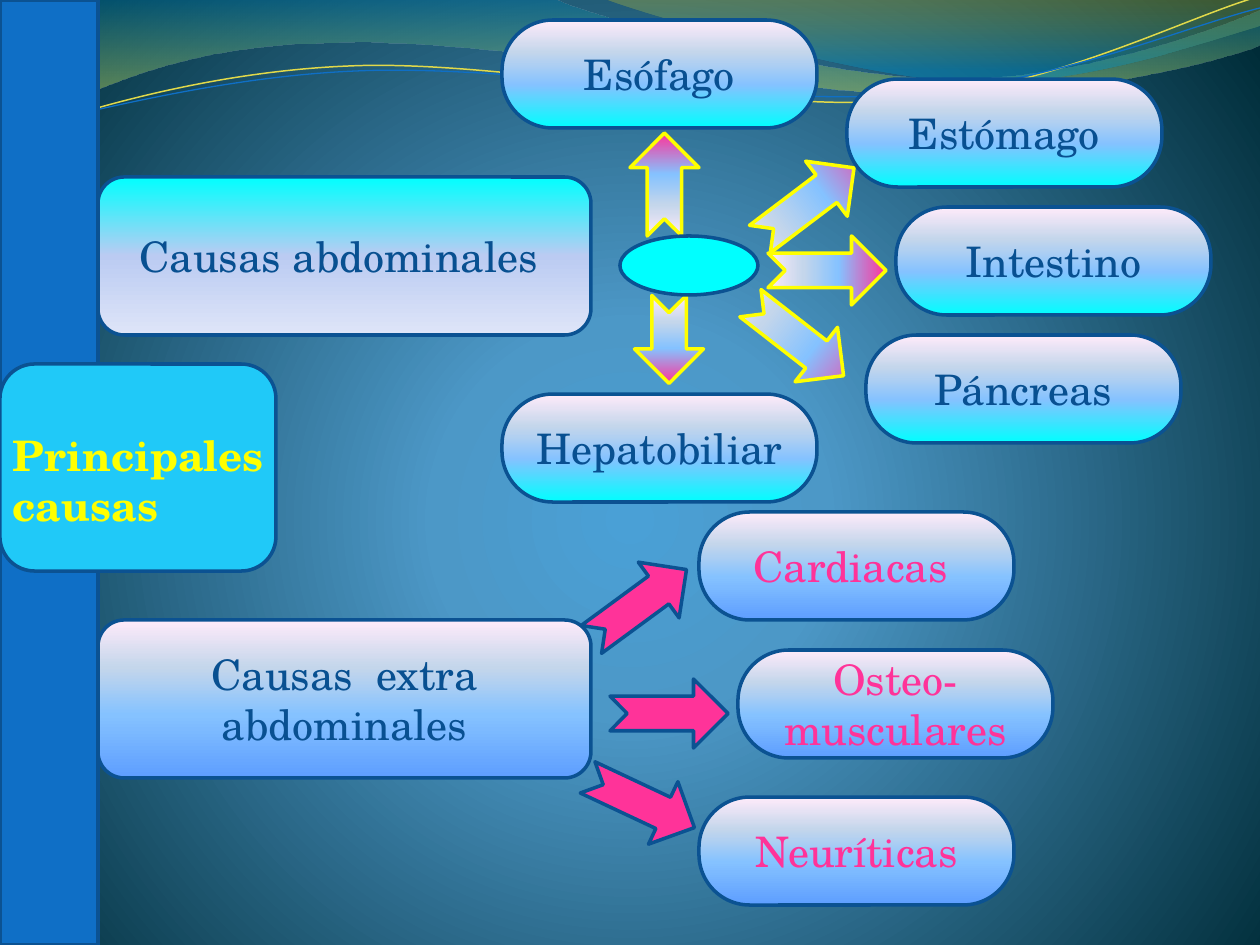
from math import cos, radians, sin

from lxml.etree import SubElement
from pptx import Presentation
from pptx.dml.color import RGBColor
from pptx.enum.shapes import MSO_SHAPE
from pptx.enum.text import MSO_ANCHOR, MSO_AUTO_SIZE, PP_ALIGN
from pptx.oxml.ns import qn
from pptx.util import Pt

PX = 914400 / 126
FONT = "TeX Gyre Schola"

NAVY = RGBColor(0x08, 0x50, 0x91)
OUTLINE = RGBColor(0x0B, 0x52, 0x92)
BLUE = RGBColor(0x0F, 0x6F, 0xC6)
SKY = RGBColor(0x20, 0xC9, 0xF8)
CYAN = RGBColor(0x00, 0xFF, 0xFF)
PINK = RGBColor(0xFF, 0x33, 0x99)
YELLOW = RGBColor(0xFF, 0xFF, 0x00)
GOLD = RGBColor(0xE1, 0xD9, 0x4A)
PERIWINKLE = RGBColor(0x5E, 0x9E, 0xFF)

# Gradients: (position %, colour, opacity %)
BACKDROP = [(0, RGBColor(0x4A, 0xA0, 0xD6), 100), (25, RGBColor(0x4C, 0x98, 0xC7), 100),
            (100, RGBColor(0x00, 0x2C, 0x38), 100)]
LAVENDER = [(0, CYAN, 100), (50, RGBColor(0xBB, 0xCB, 0xF2), 100),
            (100, RGBColor(0xDE, 0xE5, 0xF8), 100)]
PASTEL_TAIL = [(40, RGBColor(0x85, 0xC2, 0xFF), 100), (70, RGBColor(0xC4, 0xD6, 0xEB), 100),
               (100, RGBColor(0xFF, 0xEB, 0xFA), 100)]
CYAN_PASTEL, BLUE_PASTEL, PINK_PASTEL = (
    [(0, first, 100)] + PASTEL_TAIL for first in (CYAN, PERIWINKLE, PINK))

# Outlines: (left, top, width, height), then steps as they lie on the slide;
# a pair is a straight step, six numbers are a Bézier curve
WAVES = [
    ((-1, -1, 1262, 143),
     [(0, 0), (554, -1), (600, 21, 837, 79, 955, 79), (1074, 79, 1207, 33, 1260, 11),
      (1261, 45), (1239, 55, 1096, 96, 940, 95), (783, 95, 481, 35, 324, 43),
      (163, 45, 58, 105, -1, 142), (0, 0)],
     [(0, RGBColor(0x00, 0x74, 0xA1), 45), (100, RGBColor(0xFF, 0xF4, 0x35), 55)]),
    ((604, -1, 656, 88),
     [(604, -1), (641, 14, 859, 78, 969, 82), (1079, 87, 1211, 40, 1260, 26), (1260, 0),
      (604, -1)],
     [(0, RGBColor(0xD0, 0xC7, 0x2B), 30), (80, RGBColor(0x00, 0x8B, 0xBF), 45)]),
]
RIBBONS = [
    ((-3, 28, 1262, 89),
     [(0, 140), (60, 117, 199, 72, 349, 66), (498, 59, 747, 112, 898, 101),
      (1050, 89, 1182, 19, 1257, -3)], GOLD, 0.85),
    ((-3, 38, 1264, 73),
     [(0, 131), (59, 121, 207, 77, 357, 71), (508, 64, 752, 106, 903, 95),
      (1053, 84, 1187, 26, 1260, 8)], BLUE, 0.75),
]
RIBBON_TILT = -2.7

# Groups of causes: (text, top, gradient, angle)
GROUPS = [("Causas abdominales ", 177, LAVENDER, 90),
          ("Causas  extra abdominales", 620, BLUE_PASTEL, 270)]
GROUP_LEFT, GROUP_SIZE = 98, (493, 158)

# Single causes: (text, left, top)
EXTRA_ABDOMINAL = [("Cardiacas ", 699, 512), ("Neuríticas", 699, 797),
                   ("Osteo-\nmusculares", 738, 650)]
ABDOMINAL = [("Esófago", 502, 20), ("Estómago", 847, 79), ("Intestino", 896, 207),
             ("Hepatobiliar", 502, 394), ("Páncreas", 866, 335)]
CAUSE_SIZE = (315, 108)

# Arrows: (left, top, length, rotation)
EXTRA_ARROWS = [(610, 679, 118, 0), (582, 768, 118, 25.2), (580, 570, 118, 323.7)]
ABDOMINAL_ARROWS = [(768, 236, 118, 0), (625, 305, 88, 90), (748, 169, 118, 322.9),
                    (738, 305, 118, 37.9), (613, 150, 103, 270)]
ARROW_HEIGHT = 69

TITLE = "Principales\ncausas"


def emu(px):
    return round(px * PX)


def paint_gradient(fill, owner, stops, angle=None):
    """Fill linearly at the angle, or circularly when there is none."""
    fill.gradient()
    gradient = next(owner.iter(qn("a:gradFill")))
    for child in list(gradient):
        gradient.remove(child)
    stop_list = SubElement(gradient, qn("a:gsLst"))
    for position, color, opacity in stops:
        stop = SubElement(stop_list, qn("a:gs"), pos=str(position * 1000))
        rgb = SubElement(stop, qn("a:srgbClr"), val=str(color))
        if opacity < 100:
            SubElement(rgb, qn("a:alpha"), val=str(opacity * 1000))
    if angle is None:
        circle = SubElement(gradient, qn("a:path"), {"path": "circle"})
        SubElement(circle, qn("a:fillToRect"), l="10000", t="110000", r="10000", b="100000")
    else:
        SubElement(gradient, qn("a:lin"), ang=str(angle * 60000), scaled="0")


def paint(shape, fill, angle=90, line=OUTLINE, width=2):
    shape.shadow.inherit = False
    if fill is None:
        shape.fill.background()
    elif isinstance(fill, RGBColor):
        shape.fill.solid()
        shape.fill.fore_color.rgb = fill
    else:
        paint_gradient(shape.fill, shape._element, fill, angle)
    if line is None:
        shape.line.fill.background()
    else:
        shape.line.color.rgb = line
        shape.line.width = Pt(width)


def add_outline(shapes, box, steps, tilt=0):
    """Draw steps given in slide px as a shape whose box is turned by tilt degrees."""
    left, top, width, height = box
    builder = shapes.build_freeform(emu(left), emu(top))
    builder.add_line_segments([(emu(left + width), emu(top + height))], close=False)
    outline = builder.convert_to_shape()
    outline.rotation = tilt
    contour = next(outline._element.iter(qn("a:path")))
    for child in list(contour):
        contour.remove(child)
    cosine, sine = cos(radians(-tilt)), sin(radians(-tilt))
    for index, step in enumerate(steps):
        command = "cubicBezTo" if len(step) == 6 else "lnTo" if index else "moveTo"
        segment = SubElement(contour, qn("a:" + command))
        for x, y in zip(step[::2], step[1::2]):
            dx, dy = x - left - width / 2, y - top - height / 2
            SubElement(segment, qn("a:pt"),
                       x=str(emu(dx * cosine - dy * sine + width / 2)),
                       y=str(emu(dx * sine + dy * cosine + height / 2)))
    if steps[0] == steps[-1]:
        SubElement(contour, qn("a:close"))
    return outline


def add_block(shapes, kind, left, top, width, height, fill, **style):
    block = shapes.add_shape(kind, emu(left), emu(top), emu(width), emu(height))
    paint(block, fill, **style)
    return block


def write(shape, text, color=NAVY, bold=False, align=PP_ALIGN.CENTER,
          anchor=MSO_ANCHOR.MIDDLE, wrap=True):
    frame = shape.text_frame
    frame.text = text
    frame.word_wrap = wrap
    frame.vertical_anchor = anchor
    for paragraph in frame.paragraphs:
        paragraph.alignment = align
        font = paragraph.runs[0].font
        font.name, font.size, font.bold = FONT, Pt(24), bold
        font.color.rgb = color


def main():
    deck = Presentation()
    deck.slide_width, deck.slide_height = emu(1260), emu(945)
    slide = deck.slides.add_slide(deck.slide_layouts[5])
    shapes = slide.shapes
    paint_gradient(slide.background.fill, slide._element, BACKDROP)

    for box, steps, stops in WAVES:
        paint(add_outline(shapes, box, steps), stops, line=None)
    for box, steps, color, width in RIBBONS:
        paint(add_outline(shapes, box, steps, RIBBON_TILT), None, line=color, width=width)

    for label, top, stops, angle in GROUPS:
        group = add_block(shapes, MSO_SHAPE.ROUNDED_RECTANGLE, GROUP_LEFT, top, *GROUP_SIZE,
                          stops, angle=angle)
        write(group, label)

    for causes, stops, color in ((EXTRA_ABDOMINAL, BLUE_PASTEL, PINK),
                                 (ABDOMINAL, CYAN_PASTEL, NAVY)):
        for label, left, top in causes:
            cause = add_block(shapes, MSO_SHAPE.ROUNDED_RECTANGLE, left, top, *CAUSE_SIZE,
                              stops, angle=270)
            cause.adjustments[0] = 0.47
            write(cause, label, color=color)

    for arrows, fill, line in ((EXTRA_ARROWS, PINK, OUTLINE),
                               (ABDOMINAL_ARROWS, PINK_PASTEL, YELLOW)):
        for left, top, length, rotation in arrows:
            arrow = add_block(shapes, MSO_SHAPE.NOTCHED_RIGHT_ARROW, left, top, length,
                              ARROW_HEIGHT, fill, angle=180, line=line)
            arrow.rotation = rotation

    add_block(shapes, MSO_SHAPE.OVAL, 620, 236, 138, 59, CYAN)
    add_block(shapes, MSO_SHAPE.RECTANGLE, 0, 0, 98, 945, BLUE)
    add_block(shapes, MSO_SHAPE.ROUNDED_RECTANGLE, 0, 364, 276, 207, SKY)

    title = shapes.title
    title.left, title.top, title.width, title.height = map(emu, (0, 423, 291, 115))
    write(title, TITLE, color=YELLOW, bold=True, align=PP_ALIGN.LEFT,
          anchor=MSO_ANCHOR.TOP, wrap=False)
    title.text_frame.auto_size = MSO_AUTO_SIZE.SHAPE_TO_FIT_TEXT
    shapes._spTree.append(title._element)  # in front of its panel

    deck.save("out.pptx")


if __name__ == "__main__":
    main()
